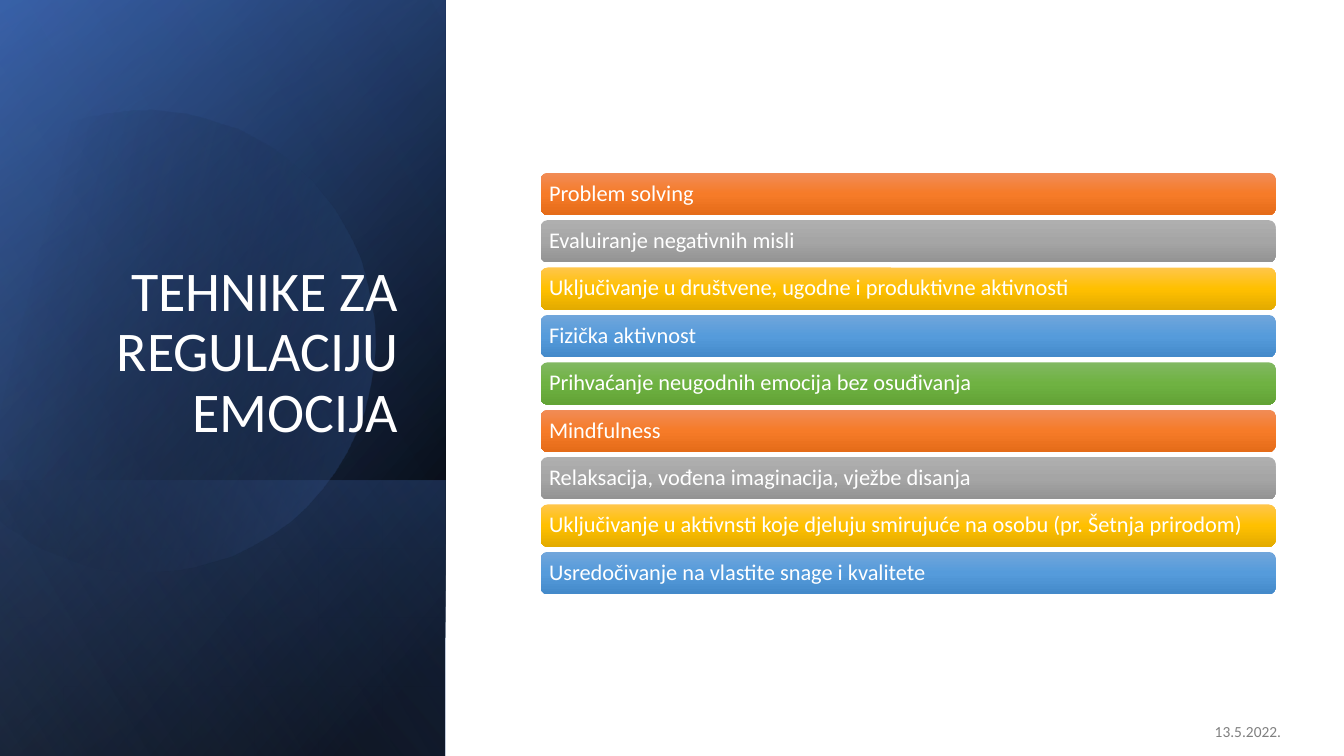
import math

import pptx
import pptx.dml.color
import pptx.enum.shapes
import pptx.enum.text
import pptx.oxml
import pptx.oxml.ns
import pptx.util

Pt = pptx.util.Pt
ALIGN = pptx.enum.text.PP_ALIGN
ANCHOR = pptx.enum.text.MSO_ANCHOR
SHAPE = pptx.enum.shapes.MSO_SHAPE

ORANGE = [(0, "F18C57", 100), (50, "F67B28", 100), (100, "E56C19", 100)]
GREY = [(0, "AFAFAF", 100), (50, "A5A5A5", 100), (100, "939393", 100)]
YELLOW = [(0, "FFC64B", 100), (50, "FFC000", 100), (100, "E3AB00", 100)]
BLUE = [(0, "71A6DB", 100), (50, "559BDB", 100), (100, "448ACA", 100)]
GREEN = [(0, "81B861", 100), (50, "6FB242", 100), (100, "62A336", 100)]
ROW_FILLS = [ORANGE, GREY, YELLOW, BLUE, GREEN]

TECHNIQUES = [
    "Problem solving",
    "Evaluiranje negativnih misli",
    "Uključivanje u društvene, ugodne i produktivne aktivnosti",
    "Fizička aktivnost",
    "Prihvaćanje neugodnih emocija bez osuđivanja",
    "Mindfulness",
    "Relaksacija, vođena imaginacija, vježbe disanja",
    "Uključivanje u aktivnsti koje djeluju smirujuće na osobu (pr. Šetnja prirodom)",
    "Usredočivanje na vlastite snage i kvalitete",
]

DISC_START = (118, 79)
DISC_CURVES = [
    [(188, 81), (252, 127), (272, 198)],
    [(297, 286), (247, 377), (160, 402)],
    [(105, 418), (49, 404), (9, 370)],
    [(9, 370), (0, 362), (0, 362)],
    [(0, 362), (0, 126), (0, 126)],
    [(0, 126), (11, 116), (11, 116)],
    [(27, 102), (47, 92), (68, 86)],
    [(85, 81), (101, 79), (118, 79)],
]
DISC_OFFSET = -11
DISC_TILT = 16.1


def colour(hex_code):
    """Turn a hex string into a colour."""
    return pptx.dml.color.RGBColor.from_string(hex_code)


def fill_gradient(shape, stops, angle):
    """Fill a shape with (position, hex, opacity) stops, without line or shadow."""
    shape.shadow.inherit = False
    shape.line.fill.background()
    shape.fill.background()
    stop_xml = "".join(
        f'<a:gs pos="{position * 1000}"><a:srgbClr val="{hex_code}">'
        f'<a:alpha val="{opacity * 1000}"/></a:srgbClr></a:gs>'
        for position, hex_code, opacity in stops)
    gradient = pptx.oxml.parse_xml(
        f'<a:gradFill {pptx.oxml.ns.nsdecls("a")} rotWithShape="1"><a:gsLst>{stop_xml}</a:gsLst>'
        f'<a:lin ang="{angle * 60000}" scaled="0"/></a:gradFill>')
    properties = shape._element.spPr
    properties.replace(properties.find(pptx.oxml.ns.qn("a:noFill")), gradient)


def write_text(frame, text, size, hex_code, align, anchor):
    """Write one formatted paragraph into a text frame and return it."""
    frame.text = text
    frame.word_wrap = True
    frame.auto_size = pptx.enum.text.MSO_AUTO_SIZE.NONE
    frame.vertical_anchor = anchor
    paragraph = frame.paragraphs[0]
    paragraph.alignment = align
    font = paragraph.runs[0].font
    font.name, font.size, font.color.rgb = "Calibri", Pt(size), colour(hex_code)
    return paragraph


def add_turned_layer(slide, left, top, width, height, stops, angle):
    """Cover a box with a mirrored rectangle turned by 90 degrees."""
    layer = slide.shapes.add_shape(
        SHAPE.RECTANGLE, Pt(left + (width - height) / 2), Pt(top + (height - width) / 2),
        Pt(height), Pt(width))
    layer.rotation = 90
    layer._element.spPr.xfrm.set("flipH", "1")
    fill_gradient(layer, stops, angle)


def disc_outline():
    """Sample the curves of the disc."""
    points, start = [DISC_START], DISC_START
    for first, second, end in DISC_CURVES:
        for step in range(1, 17):
            t = step / 16
            weights = ((1 - t) ** 3, 3 * t * (1 - t) ** 2, 3 * t * t * (1 - t), t ** 3)
            points.append(tuple(
                sum(weight * point[axis] for weight, point in zip(weights, (start, first, second, end)))
                for axis in (0, 1)))
        start = end
    return points


def add_disc(slide, left, top):
    """Draw the tilted translucent disc relative to the panel corner."""
    cos, sin = math.cos(math.radians(DISC_TILT)), math.sin(math.radians(DISC_TILT))
    centre_x, centre_y = left + 114, top + 241
    tilted = []
    for x, y in disc_outline():
        dx, dy = left + x + DISC_OFFSET - centre_x, top + y - centre_y
        tilted.append((centre_x + dx * cos - dy * sin, centre_y + dx * sin + dy * cos))
    builder = slide.shapes.build_freeform(*tilted[0], scale=float(Pt(1)))
    builder.add_line_segments(tilted[1:], close=True)
    disc = builder.convert_to_shape()
    disc.rotation = 360 - DISC_TILT
    fill_gradient(disc, [(29, "000000", 0), (100, "4472C4", 43)], 30)


def add_title_panel(slide, left, top, width, height):
    """Build the dark panel with the slide title."""
    box = (left, top, width, height)
    add_turned_layer(slide, *box, [(8, "000000", 100), (100, "2F5597", 100)], 50)
    add_turned_layer(slide, *box, [(0, "000000", 0), (99, "4472C4", 46)], 30)
    add_turned_layer(slide, left, top + height - 197, width, 197,
                     [(2, "4472C4", 29), (100, "000000", 30)], 130)
    add_disc(slide, left, top)
    add_turned_layer(slide, *box, [(0, "000000", 0), (99, "8FAADC", 11)], 120)
    title = slide.shapes.title
    title.left, title.top = Pt(left + 46), Pt(top + 132.5)
    title.width, title.height = Pt(width - 72.7), Pt(188.6)
    heading = write_text(title.text_frame, "TEHNIKE ZA REGULACIJU EMOCIJA", 40, "FFFFFF",
                         ALIGN.RIGHT, ANCHOR.BOTTOM)
    heading.line_spacing = 0.9
    slide.shapes._spTree.append(title._element)


def add_technique_list(slide, left, top, width, height):
    """Stack one rounded bar per technique, evenly spaced over the box."""
    bar_height = 30.24
    pitch = (height - bar_height) / (len(TECHNIQUES) - 1)
    for index, technique in enumerate(TECHNIQUES):
        bar = slide.shapes.add_shape(SHAPE.ROUNDED_RECTANGLE, Pt(left), Pt(top + index * pitch),
                                     Pt(width), Pt(bar_height))
        fill_gradient(bar, ROW_FILLS[index % len(ROW_FILLS)], 90)
        frame = bar.text_frame
        frame.margin_left = frame.margin_right = Pt(4.5)
        frame.margin_top = frame.margin_bottom = Pt(5)
        label = write_text(frame, technique, 16, "FFFFFF", ALIGN.LEFT, ANCHOR.MIDDLE)
        label.line_spacing = 0.9


def add_date(slide, left, top, width, height):
    """Place the date in the bottom corner."""
    date = slide.shapes.add_textbox(Pt(left), Pt(top), Pt(width), Pt(height))
    paragraph = write_text(date.text_frame, "13.5.2022.", 11, "808080", ALIGN.RIGHT, ANCHOR.MIDDLE)
    paragraph.space_after = Pt(6)


def main():
    """Build and save the slide."""
    deck = pptx.Presentation()
    deck.slide_width, deck.slide_height = Pt(960), Pt(540)
    slide = deck.slides.add_slide(deck.slide_layouts[5])
    add_title_panel(slide, 0, 0, 318.2, 540)
    add_date(slide, 706.3, 508.3, 216, 28.8)
    add_technique_list(slide, 386.2, 123.4, 525, 301)
    deck.save("out.pptx")


if __name__ == "__main__":
    main()
